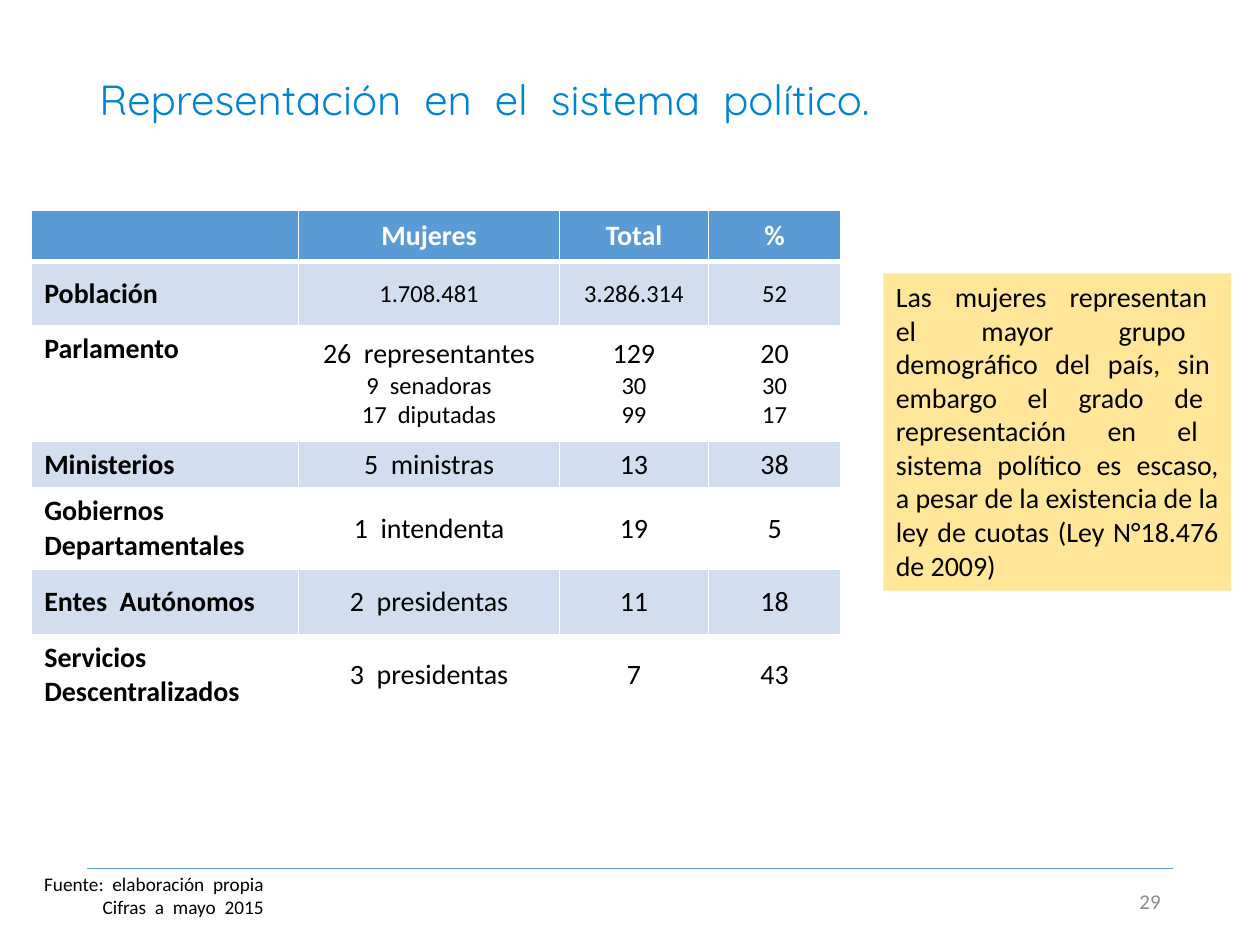
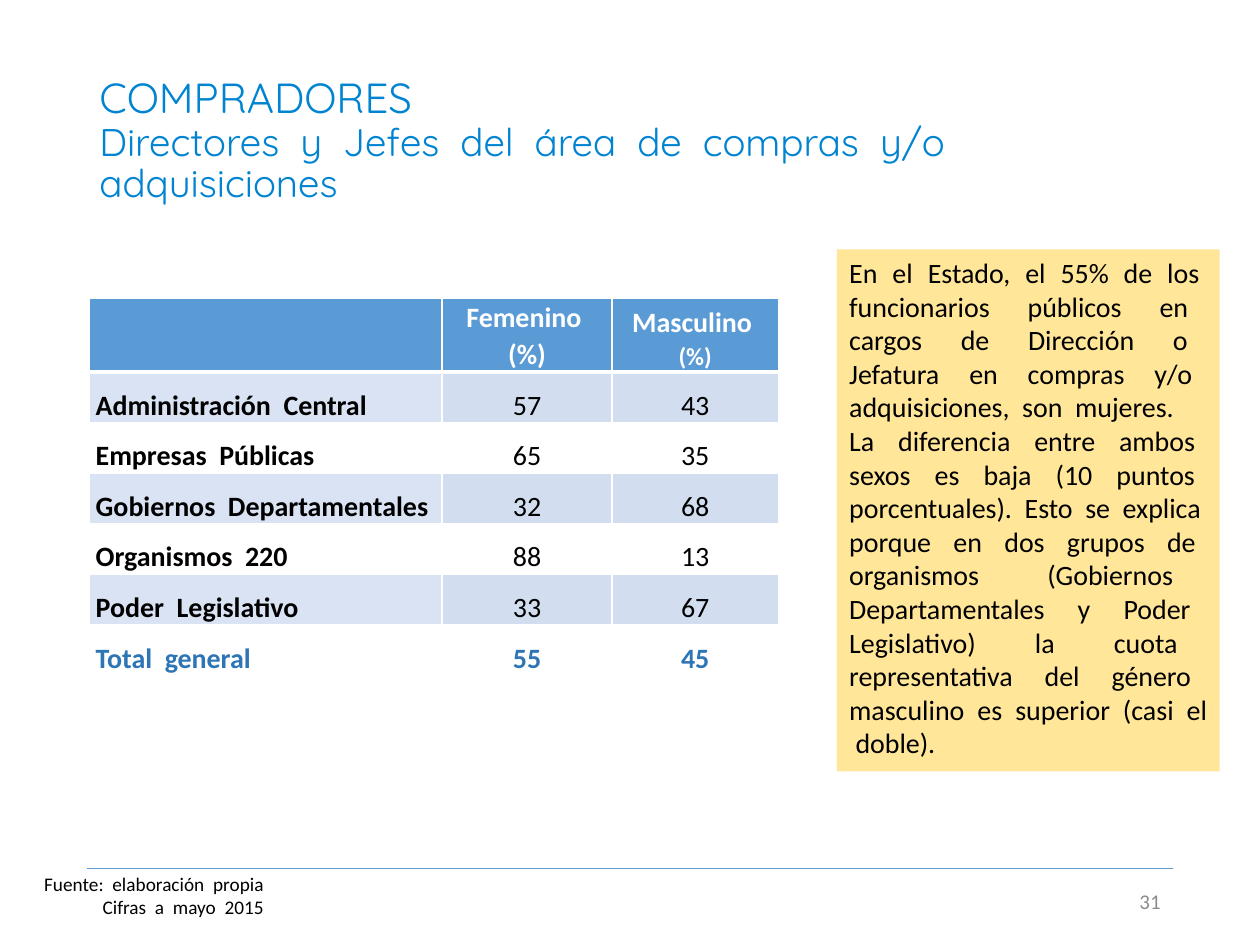
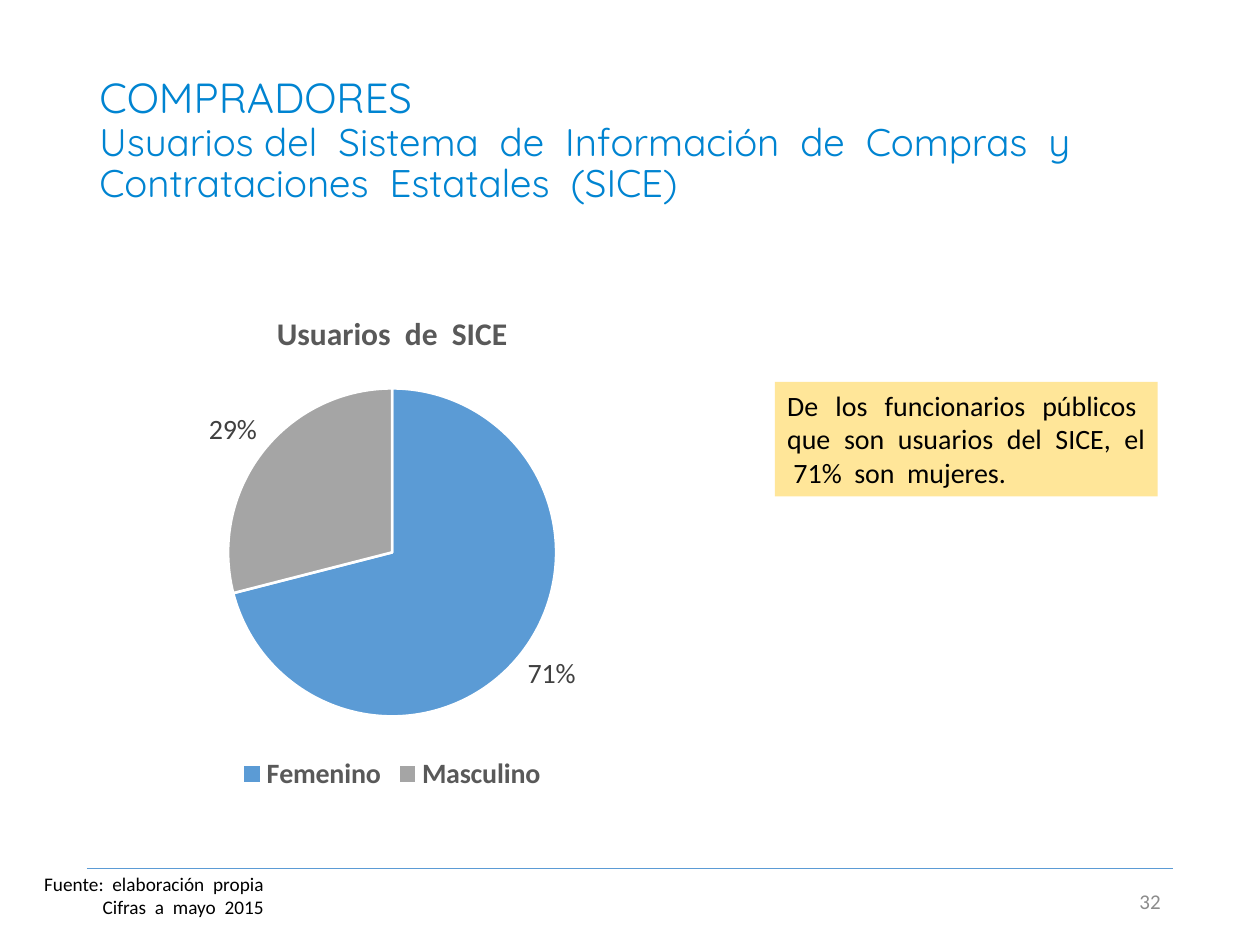
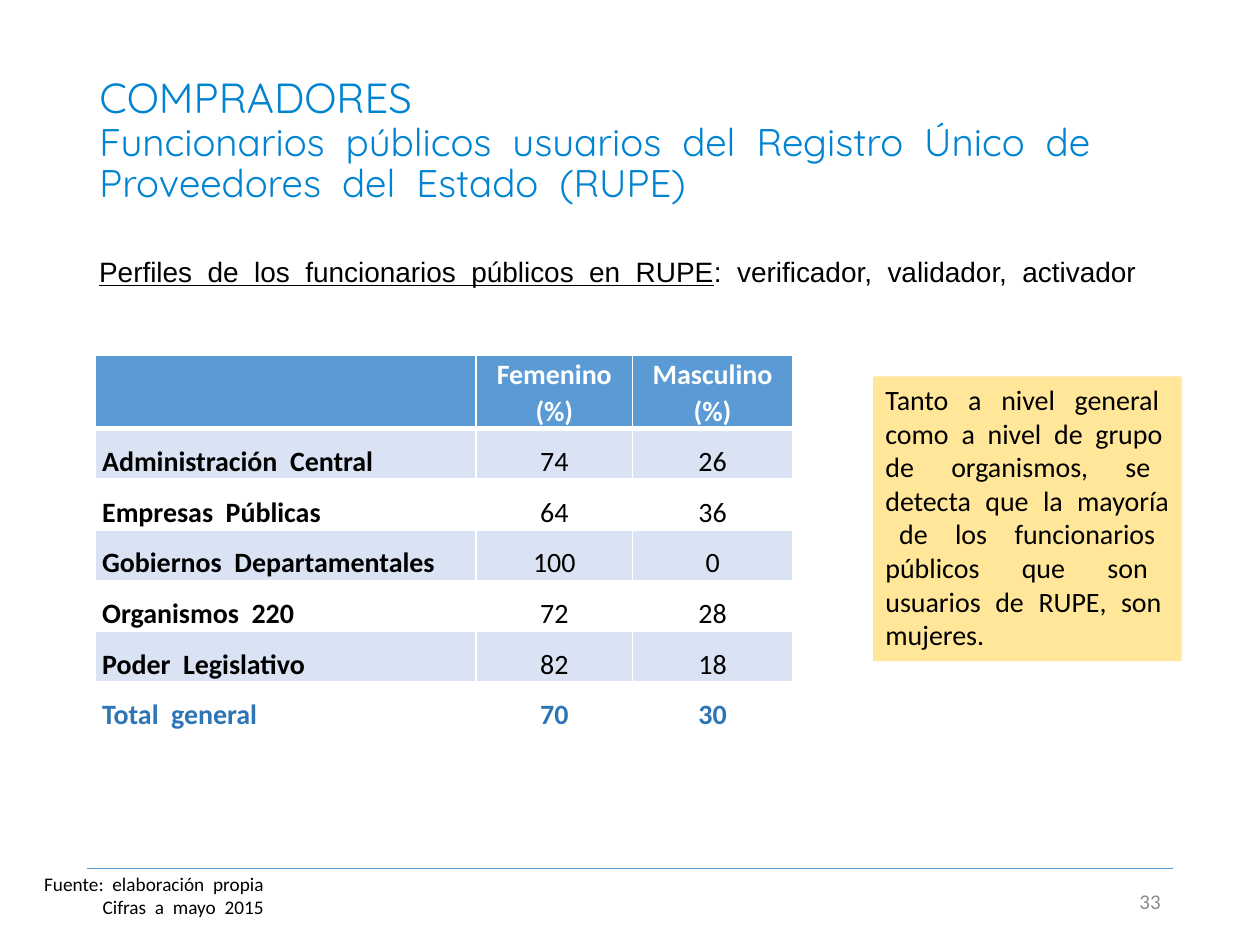
from copy import deepcopy

from lxml import etree
from pptx import Presentation
from pptx.chart.data import CategoryChartData
from pptx.dml.color import RGBColor
from pptx.enum.chart import XL_CHART_TYPE, XL_LABEL_POSITION, XL_LEGEND_POSITION
from pptx.enum.shapes import MSO_CONNECTOR, MSO_SHAPE
from pptx.enum.text import MSO_ANCHOR, MSO_AUTO_SIZE, PP_ALIGN
from pptx.oxml.ns import qn
from pptx.util import Cm, Pt

LEFT, MID, RIGHT, FULL = PP_ALIGN.LEFT, PP_ALIGN.CENTER, PP_ALIGN.RIGHT, PP_ALIGN.JUSTIFY
TOP, HALF, LOW = MSO_ANCHOR.TOP, MSO_ANCHOR.MIDDLE, MSO_ANCHOR.BOTTOM
GROW, FIXED = MSO_AUTO_SIZE.SHAPE_TO_FIT_TEXT, MSO_AUTO_SIZE.NONE

HUES = {"title": "0084D1", "head": "5B9BD5", "band": "D2DEEF", "pale": "DAE3F3",
        "white": "FFFFFF", "black": "000000", "total": "2E75B6", "note": "FFE699",
        "page": "8C8C8C", "male": "A5A5A5", "label": "404040", "key": "595959"}
SMALL = {"size": 14}
EDGE, WIDE = 1.75, 21.9  # left margin and width shared by titles, rule and intro


def small(*words):
    return [(word, SMALL) for word in words]


def buyers(text):
    return [["COMPRADORES", "\n", (text, {"size": 22})]]


# Content: a paragraph is a string, a (text, format) pair or a list of these
SOURCE = ["Fuente:  elaboración  propia", "Cifras  a  mayo  2015"]
GROUPS = ["Administración  Central", "Empresas  Públicas", "Gobiernos  Departamentales",
          "Organismos  220", "Poder  Legislativo", "Total  general"]


def shares(heads, women, men):
    return [["", *heads], *map(list, zip(GROUPS, women, men))]


COMPACT = {"rows": [1.48] + [1.02] * 6, "pad": 0.13, "space": 1.07, "anchor": LOW, "total": True}

SLIDES = [
    {"page": "29", "title": ["Representación  en  el  sistema  político."], "box": (1.04, 2.01),
     "table": {
         "at": (0.64, 4.24), "cols": [5.38, 5.26, 3, 2.67],
         "rows": [0.91, 1.3, 2.32, 0.94, 1.63, 1.32, 1.63], "bands": ("band", "band"),
         "data": [
             ["", "Mujeres", "Total", "%"],
             ["Población", small("1.708.481"), small("3.286.314"), small("52")],
             ["Parlamento", ["26  representantes", *small("9  senadoras", "17  diputadas")],
              ["129", *small("30", "99")], ["20", *small("30", "17")]],
             ["Ministerios", "5  ministras", "13", "38"],
             ["Gobiernos  Departamentales", "1  intendenta", "19", "5"],
             ["Entes  Autónomos", "2  presidentas", "11", "18"],
             ["Servicios  Descentralizados", "3  presidentas", "7", "43"]],
         "tops": ["Parlamento"]},
     "note": ((17.81, 5.51, 7.01, 6.4), [
         "Las  mujeres  representan  el  mayor  grupo  demográfico  del  país,  sin  embargo  el  "
         "grado  de  representación  en  el  sistema  político  es  escaso, a pesar de la existencia "
         "de la ley de cuotas (Ley N°18.476 de 2009)"])},
    {"page": "31",
     "title": buyers("Directores  y  Jefes  del  área  de  compras  y/o  adquisiciones"),
     "table": {
         "at": (1.8, 6.02), "cols": [7.11, 3.43, 3.35], "bands": ("pale", "band"), **COMPACT,
         "data": shares(["Femenino  (%)", [["Masculino  ", ("(%)", SMALL)]]],
                        ["57", "65", "32", "88", "33", "55"],
                        ["43", "35", "68", "13", "67", "45"])},
     "note": ((16.87, 5.03, 7.72, 10.52), [
         "En  el  Estado,  el  55%  de  los  funcionarios  públicos  en  cargos  de  Dirección  o  "
         "Jefatura  en  compras  y/o  adquisiciones,  son  mujeres.",
         "La  diferencia  entre  ambos  sexos  es  baja  (10  puntos  porcentuales).  Esto  se  "
         "explica  porque  en  dos  grupos  de  organismos  (Gobiernos  Departamentales  y  Poder  "
         "Legislativo)  la  cuota  representativa  del  género  masculino  es  superior  (casi  el  "
         "doble)."])},
    {"page": "32",
     "title": buyers("Usuarios del  Sistema  de  Información  de  Compras  y  "
                     "Contrataciones  Estatales  (SICE)"),
     "pie": {"at": (0.74, 5.82, 14.33, 10.24), "title": "Usuarios  de  SICE",
             "parts": [("Femenino", 0.71, "head"), ("Masculino", 0.29, "male")]},
     "note": ((15.62, 7.7, 7.72, 2.31), [
         "De  los  funcionarios  públicos  que  son  usuarios  del  SICE,  el  71%  son  mujeres."])},
    {"page": "33",
     "title": buyers("Funcionarios  públicos  usuarios  del  Registro  Único  de  "
                     "Proveedores  del  Estado  (RUPE)"),
     "intro": [[("Perfiles  de  los  funcionarios  públicos  en  RUPE", {"under": True}),
                ":  verificador,  validador,  activador"]],
     "table": {
         "at": (1.93, 7.16), "cols": [7.67, 3.15, 3.23], "bands": ("pale", "pale"), **COMPACT,
         "data": shares([["Femenino", "(%)"], ["Masculino", "(%)"]],
                        ["74", "64", "100", "72", "82", "70"],
                        ["26", "36", "0", "28", "18", "30"])},
     "note": ((17.6, 7.59, 6.22, 5.74), [
         "Tanto  a  nivel  general  como  a  nivel  de  grupo  de  organismos,  se  detecta  que  la  "
         "mayoría  de  los  funcionarios  públicos  que  son  usuarios  de  RUPE,  son  mujeres."])},
]


def tint(name):
    return RGBColor.from_string(HUES[name])


def paint(fill, name):
    fill.solid()
    fill.fore_color.rgb = tint(name)


def style(font, size=16, face="Calibri", color="black", bold=False, under=None):
    font.size, font.name, font.bold = Pt(size), face, bold
    font.color.rgb = tint(color)
    if under is not None:
        font.underline = under


def write(frame, paras, align=LEFT, space=None, **form):
    """Fill a text frame; any run may override the shared format."""
    for i, para in enumerate(paras):
        line = frame.paragraphs[0] if i == 0 else frame.add_paragraph()
        line.alignment, line.line_spacing = align, space
        for part in para if isinstance(para, list) else [para]:
            if part == "\n":
                line.add_line_break()
                line._p[-1].append(deepcopy(line.runs[-1]._r.rPr))
                continue
            text, extra = part if isinstance(part, tuple) else (part, {})
            run = line.add_run()
            run.text = text
            style(run.font, **{**form, **extra})


def add_text(slide, box, paras, anchor=TOP, fit=FIXED, wrap=True, **form):
    frame = slide.shapes.add_textbox(*map(Cm, box)).text_frame
    frame.word_wrap, frame.auto_size, frame.vertical_anchor = wrap, fit, anchor
    write(frame, paras, **form)
    return frame


def add_rule(slide, layout):
    """Draw the footer rule and hand it to the layout, so every slide shows it."""
    rule = slide.shapes.add_connector(MSO_CONNECTOR.STRAIGHT, Cm(EDGE), Cm(17.5),
                                      Cm(EDGE + WIDE), Cm(17.5))
    rule.line.color.rgb, rule.line.width = tint("head"), Pt(0.5)
    etree.SubElement(rule._element.spPr, qn("a:effectLst"))
    layout.shapes._spTree.append(rule._element)


def add_title(slide, paras, top=1.02, high=3.68):
    title = slide.shapes.title
    title.left, title.top, title.width, title.height = map(Cm, (EDGE, top, WIDE, high))
    frame = title.text_frame
    frame.auto_size, frame.vertical_anchor = FIXED, HALF
    write(frame, paras, space=0.9, size=24, face="Quicksand", color="title")


def add_foot(slide, page):
    frame = add_text(slide, (0.64, 17.45, 4.98, 1.19), SOURCE, fit=GROW, wrap=False, size=11)
    frame.paragraphs[1].alignment = RIGHT
    add_text(slide, (17.93, 17.65, 5.72, 1.02), [page], anchor=HALF, align=RIGHT,
             size=12, color="page")


def add_note(slide, box, paras):
    note = slide.shapes.add_shape(MSO_SHAPE.RECTANGLE, *map(Cm, box))
    note.shadow.inherit = False
    paint(note.fill, "note")
    note.line.fill.background()
    frame = note.text_frame
    frame.word_wrap, frame.auto_size, frame.vertical_anchor = True, GROW, TOP
    write(frame, paras, align=FULL)


def add_edges(cell, **widths):
    props = cell._tc.get_or_add_tcPr()
    for i, side in enumerate("LRTB"):
        edge = etree.Element(qn(f"a:ln{side}"), w=str(Pt(widths.get(side, 1))))
        fill = etree.SubElement(edge, qn("a:solidFill"))
        etree.SubElement(fill, qn("a:srgbClr"), val=HUES["white"])
        props.insert(i, edge)


def add_grid(slide, at, cols, rows, bands, data, pad=None, space=None,
             anchor=HALF, total=False, tops=()):
    size = (sum(cols), sum(rows))
    grid = slide.shapes.add_table(len(rows), len(cols), *map(Cm, at + size)).table
    grid.horz_banding = False
    for col, wide in zip(grid.columns, cols):
        col.width = Cm(wide)
    for r, (row, high) in enumerate(zip(data, rows)):
        grid.rows[r].height = Cm(high)
        last = total and r == len(rows) - 1
        color = "white" if r == 0 else "total" if last else "black"
        for c, text in enumerate(row):
            cell = grid.cell(r, c)
            cell.vertical_anchor = TOP if text in tops else anchor
            if pad is not None:
                cell.margin_left = cell.margin_right = Cm(pad)
                cell.margin_top = cell.margin_bottom = 0
            paint(cell.fill, "head" if r == 0 else bands[c > 0] if r % 2 else "white")
            add_edges(cell, **({"B": 3} if r == 0 else {"T": 3} if r == 1 else {}))
            if text:
                write(cell.text_frame, text if isinstance(text, list) else [text],
                      align=MID if c else LEFT, space=space, color=color,
                      bold=r == 0 or c == 0 or last)


def add_pie(slide, at, title, parts):
    data = CategoryChartData(number_format="0%")
    data.categories = [name for name, _, _ in parts]
    data.add_series("Series 1", [share for _, share, _ in parts])
    chart = slide.shapes.add_chart(XL_CHART_TYPE.PIE, *map(Cm, at), data).chart
    style(chart.font, size=10)
    write(chart.chart_title.text_frame, [title], align=MID, size=18, color="key", bold=True)
    chart.has_legend = True
    chart.legend.position = XL_LEGEND_POSITION.BOTTOM
    chart.legend.include_in_layout = False
    style(chart.legend.font, color="key", bold=True)
    plot = chart.plots[0]
    plot.vary_by_categories = True
    for i, (_, _, color) in enumerate(parts):
        slice_ = plot.series[0].points[i].format
        paint(slice_.fill, color)
        slice_.line.color.rgb, slice_.line.width = tint("white"), Pt(1.5)
    labels = plot.series[0].data_labels
    labels.show_value, labels.show_percentage = True, False
    labels.number_format, labels.number_format_is_linked = "0%", False
    labels.position = XL_LABEL_POSITION.OUTSIDE_END
    style(labels.font, color="label")


def main():
    deck = Presentation()
    deck.slide_width, deck.slide_height = Cm(25.4), Cm(19.05)
    layout = deck.slide_layouts[5]
    for i, page in enumerate(SLIDES):
        slide = deck.slides.add_slide(layout)
        if i == 0:
            add_rule(slide, layout)
        add_title(slide, page["title"], *page.get("box", ()))
        if "intro" in page:
            add_text(slide, (EDGE, 5.08, WIDE, 1.24), page["intro"], space=0.9, face="Arial")
        if "table" in page:
            add_grid(slide, **page["table"])
        if "pie" in page:
            add_pie(slide, **page["pie"])
        add_note(slide, *page["note"])
        add_foot(slide, page["page"])
    deck.save("out.pptx")


if __name__ == "__main__":
    main()
